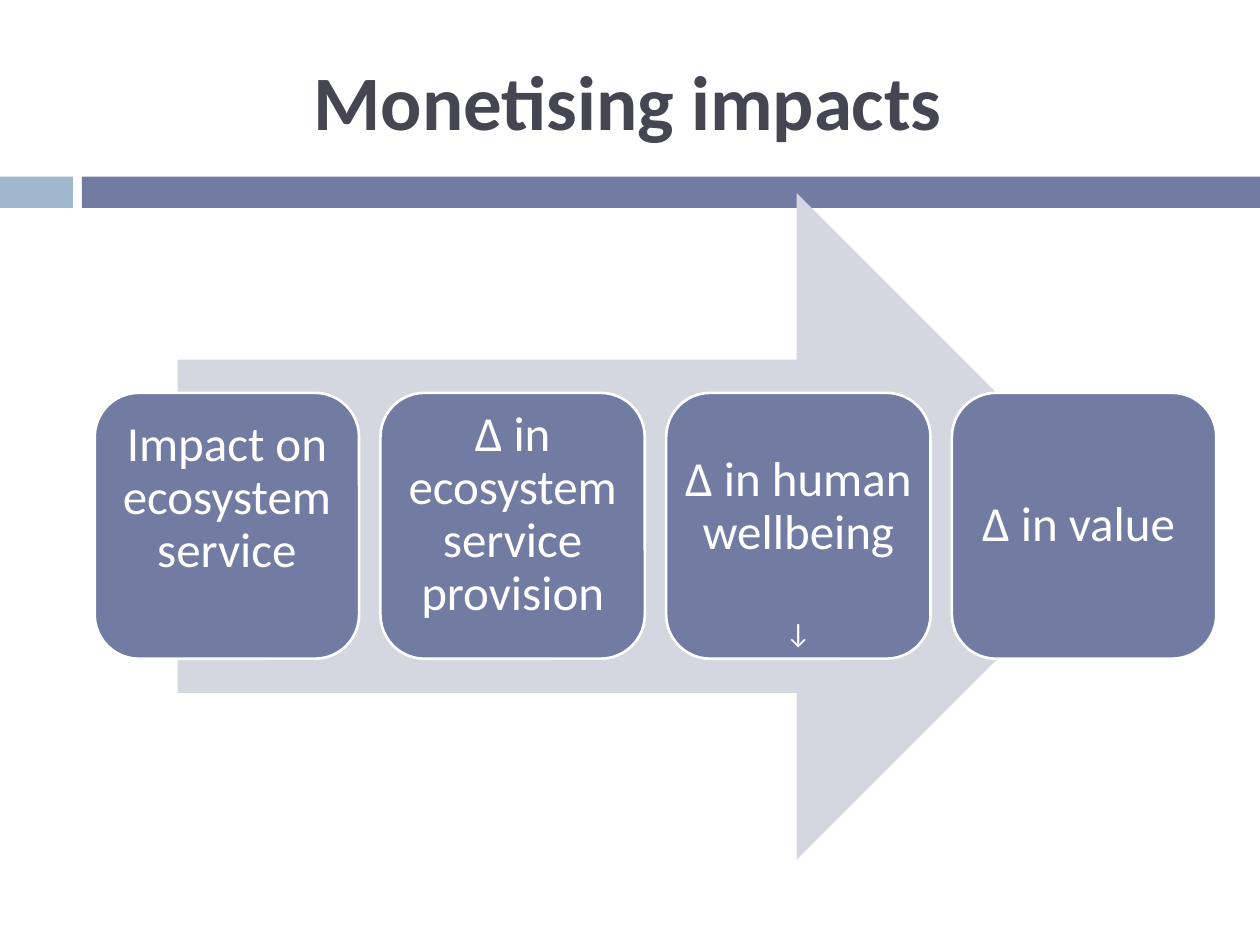
from pptx import Presentation
from pptx.dml.color import RGBColor
from pptx.enum.shapes import MSO_SHAPE as Kind
from pptx.enum.text import MSO_ANCHOR as Anchor, PP_ALIGN as Align
from pptx.util import Cm, Pt

INK = RGBColor(0x46, 0x46, 0x53)
BLUE = RGBColor(0x72, 0x7C, 0xA3)
SKY = RGBColor(0x9F, 0xB8, 0xCD)
PALE = RGBColor(0xD5, 0xD7, 0xE0)
WHITE = RGBColor(0xFF, 0xFF, 0xFF)


def write(para, text, size=28, color=WHITE, bold=False, lead=0.9, before=0):
    para.alignment = Align.CENTER
    para.line_spacing = lead
    para.space_before = Pt(before)
    run = para.add_run()
    run.text = text
    font = run.font
    font.name, font.size, font.bold = "Calibri", Pt(size), bold
    font.color.rgb = color


class Deck:
    """Draws the slide's elements in one shared style, in centimetres."""

    def __init__(self, slide, inset=0.04):
        self.shapes = slide.shapes
        self.inset = inset

    def frame(self, shape, top=0, right=0, bottom=0):
        frame = shape.text_frame
        frame.word_wrap = True
        frame.vertical_anchor = Anchor.MIDDLE
        frame.margin_left = Cm(self.inset)
        frame.margin_top = Cm(self.inset + top)
        frame.margin_right = Cm(self.inset + right)
        frame.margin_bottom = Cm(self.inset + bottom)
        return frame

    def shape(self, kind, spot, fill, line=None):
        shape = self.shapes.add_shape(kind, *map(Cm, spot))
        shape.shadow.inherit = False
        shape.fill.solid()
        shape.fill.fore_color.rgb = fill
        if line is None:
            shape.line.fill.background()
        else:
            shape.line.color.rgb = line
            shape.line.width = Pt(1.5)
        return shape

    def title(self, text, spot):
        box = self.shapes.add_textbox(*map(Cm, spot))
        para = self.frame(box, right=0.74).paragraphs[0]
        write(para, text, size=44, color=INK, bold=True, lead=1)

    def step(self, text, spot, top=0, bottom=0):
        box = self.shape(Kind.ROUNDED_RECTANGLE, spot, BLUE, WHITE)
        frame = self.frame(box, top=top, bottom=bottom)
        write(frame.paragraphs[0], text)
        return frame


def main():
    show = Presentation()
    show.slide_width, show.slide_height = Cm(25.4), Cm(19.05)
    deck = Deck(show.slides.add_slide(show.slide_layouts[6]))

    deck.shape(Kind.RECTANGLE, (0, 3.56, 1.47, 0.63), SKY)
    deck.shape(Kind.RECTANGLE, (1.65, 3.56, 23.75, 0.63), BLUE)
    deck.title("Monetising impacts", (1.7, 0.64, 22.66, 2.74))
    deck.shape(Kind.RIGHT_ARROW, (3.58, 3.89, 19.2, 13.44), PALE)

    steps = [
        ("Impact on ecosystem service", 0, 1.09),
        ("∆ in ecosystem service provision", 0, 0.44),
        ("∆ in human wellbeing", 1.05, 0),
        ("∆ in value ", 0, 0),
    ]
    frames = [
        deck.step(text, (1.91 + 5.76 * i, 7.92, 5.33, 5.36), top, bottom)
        for i, (text, top, bottom) in enumerate(steps)
    ]
    write(frames[2].add_paragraph(), "↓", size=16, before=34)

    show.save("out.pptx")


if __name__ == "__main__":
    main()
